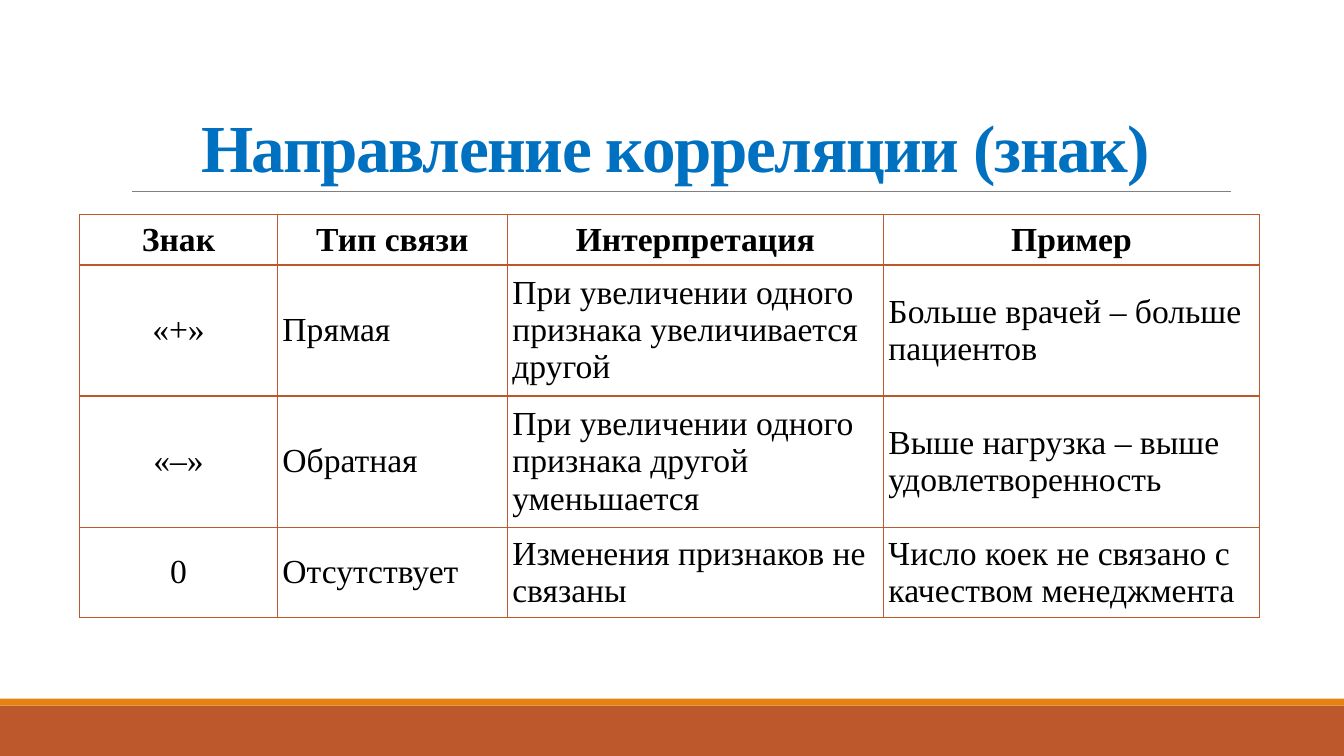
import pptx
import pptx.dml.color
import pptx.enum.shapes
import pptx.enum.text
import pptx.oxml
import pptx.oxml.ns
import pptx.util

Pt = pptx.util.Pt
RGBColor = pptx.dml.color.RGBColor
ALIGN = pptx.enum.text.PP_ALIGN
ANCHOR = pptx.enum.text.MSO_ANCHOR
SHAPE = pptx.enum.shapes.MSO_SHAPE

RUST = RGBColor(0xBD, 0x58, 0x2C)
ORANGE = RGBColor(0xE4, 0x83, 0x12)
GRAY = RGBColor(0x80, 0x80, 0x80)
BLUE = RGBColor(0x00, 0x70, 0xC0)
BLACK = RGBColor(0, 0, 0)
FONT = "Times New Roman"
INSET = Pt(3.6)
PAGE_WIDTH, PAGE_HEIGHT = 960, 540

COLUMN_WIDTHS = [141.3, 164.2, 268.7, 268.7]
ROW_HEIGHTS = [33.8, 86.9, 86.9, 60.3]
ROWS = [
    ["Знак", "Тип связи", "Интерпретация", "Пример"],
    ["«+»", "Прямая", "При увеличении одного признака увеличивается другой",
     "Больше врачей – больше пациентов"],
    ["«–»", "Обратная", "При увеличении одного признака другой уменьшается",
     "Выше нагрузка – выше удовлетворенность"],
    ["0", "Отсутствует", "Изменения признаков не связаны",
     "Число коек не связано с качеством менеджмента"],
]


def style_paragraph(para, size, color, bold, align):
    """Set the font and alignment of a whole paragraph."""
    para.alignment = align
    para.font.name = FONT
    para.font.size = Pt(size)
    para.font.bold = bold
    para.font.color.rgb = color


def add_footer(page, left, top, width, height):
    """Draw the rust band with a thin orange stripe along its top."""
    stripe = 5
    bands = [(top + stripe, height - stripe, RUST), (top, stripe, ORANGE)]
    for band_top, band_height, color in bands:
        band = page.shapes.add_shape(
            SHAPE.RECTANGLE, Pt(left), Pt(band_top), Pt(width), Pt(band_height))
        band.shadow.inherit = False
        band.fill.solid()
        band.fill.fore_color.rgb = color
        band.line.fill.background()


def add_title(page, left, top, width, height):
    """Place the heading at the foot of its box, above a thin rule."""
    bottom = Pt(top + height)
    rule = page.shapes.add_connector(
        pptx.enum.shapes.MSO_CONNECTOR.STRAIGHT,
        Pt(left + 8), bottom, Pt(left + width + 1), bottom)
    rule.line.color.rgb = GRAY
    rule.line.width = Pt(0.5)
    rule._element.spPr.append(pptx.oxml.parse_xml(
        f"<a:effectLst {pptx.oxml.ns.nsdecls('a')}/>"))

    box = page.shapes.add_textbox(Pt(left), Pt(top), Pt(width), Pt(height))
    frame = box.text_frame
    frame.word_wrap = True
    frame.vertical_anchor = ANCHOR.BOTTOM
    frame.margin_left = frame.margin_right = INSET
    frame.margin_top = frame.margin_bottom = INSET
    para = frame.paragraphs[0]
    para.line_spacing = 0.85
    style_paragraph(para, 48, BLUE, True, ALIGN.CENTER)
    span = para.add_run()
    span.text = "Направление корреляции (знак)"
    span._r.get_or_add_rPr().set("spc", "-100")


def style_cell(cell):
    """Clear the fill of a cell, set its margins and draw its four borders."""
    cell.vertical_anchor = ANCHOR.MIDDLE
    cell.margin_left = cell.margin_right = INSET
    cell.margin_top = cell.margin_bottom = INSET
    properties = cell._tc.get_or_add_tcPr()
    for side in ("lnL", "lnR", "lnT", "lnB"):
        properties.append(pptx.oxml.parse_xml(
            f'<a:{side} {pptx.oxml.ns.nsdecls("a")} w="{Pt(1)}">'
            f'<a:solidFill><a:srgbClr val="{RUST}"/></a:solidFill></a:{side}>'))
    cell.fill.background()


def add_correlation_table(page, left, top):
    """Build the table of correlation signs from its top left corner."""
    table = page.shapes.add_table(
        len(ROWS), len(COLUMN_WIDTHS), Pt(left), Pt(top),
        Pt(sum(COLUMN_WIDTHS)), Pt(sum(ROW_HEIGHTS))).table
    table.horz_banding = False
    for column, width in zip(table.columns, COLUMN_WIDTHS):
        column.width = Pt(width)
    for row_index, texts in enumerate(ROWS):
        table.rows[row_index].height = Pt(ROW_HEIGHTS[row_index])
        for column_index, text in enumerate(texts):
            cell = table.cell(row_index, column_index)
            cell.text = text
            header = row_index == 0
            centered = header or column_index == 0
            style_paragraph(cell.text_frame.paragraphs[0], 24, BLACK, header,
                            ALIGN.CENTER if centered else ALIGN.LEFT)
            style_cell(cell)


def main():
    """Build the slide and save it."""
    deck = pptx.Presentation()
    deck.slide_width, deck.slide_height = Pt(PAGE_WIDTH), Pt(PAGE_HEIGHT)
    page = deck.slides.add_slide(deck.slide_layouts[6])
    add_footer(page, 0, 499, PAGE_WIDTH, PAGE_HEIGHT - 499)
    add_title(page, 86.4, 22.6, 792, 114.2)
    add_correlation_table(page, 56.9, 153.2)
    deck.save("out.pptx")


if __name__ == "__main__":
    main()
